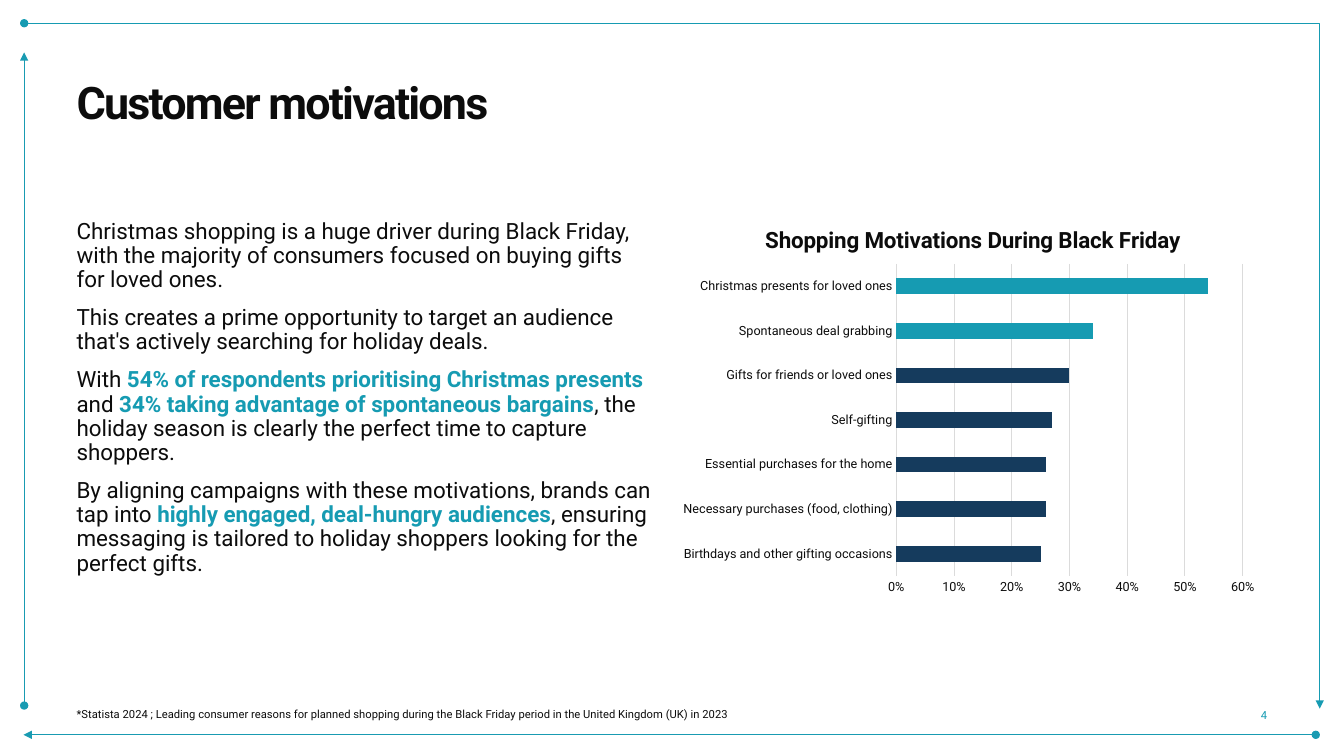
from dataclasses import dataclass

from lxml.etree import SubElement
from pptx import Presentation
from pptx.chart.data import CategoryChartData
from pptx.dml.color import RGBColor as RGB
from pptx.enum.chart import XL_CHART_TYPE as CT, XL_TICK_MARK as TICK
from pptx.enum.shapes import MSO_CONNECTOR as CONN
from pptx.enum.text import MSO_ANCHOR as ANCHOR, MSO_AUTO_SIZE as FIT, PP_ALIGN as ALIGN
from pptx.oxml import parse_xml
from pptx.oxml.ns import nsdecls, qn
from pptx.util import Inches, Pt


@dataclass(frozen=True)
class Theme:
    font: str = "Roboto"
    ink: str = "0C0C0C"
    teal: str = "169BB2"
    edge: str = "199BB2"
    navy: str = "153B5D"
    grid: str = "DBDBDB"
    title: int = 32
    body: int = 16
    chart: int = 10
    axis: int = 9
    small: int = 8
    line: float = 0.75


class Deck:
    MARGIN, COL, ROW = 0.76, 0.984, 0.1

    def __init__(self, prs, theme):
        self.prs, self.theme = prs, theme
        self.slide = prs.slides.add_slide(prs.slide_layouts[5])

    def cell(self, col, row, cols, rows):
        return (Inches(self.MARGIN + col * self.COL), Inches(row * self.ROW),
                Inches(cols * self.COL), Inches(rows * self.ROW))

    def font(self, font, size, color=None, bold=False):
        font.name, font.size, font.bold = self.theme.font, Pt(size), bold
        font.color.rgb = RGB.from_string(color or self.theme.ink)

    def stroke(self, line, color):
        line.color.rgb = RGB.from_string(color)
        line.width = Pt(self.theme.line)

    def frame_line(self, kind, start, end, color, head, tail):
        w, h = self.prs.slide_width, self.prs.slide_height
        (x1, y1), (x2, y2) = start, end
        sp = self.slide.shapes.add_connector(
            kind, int(w * x1 / 100), int(h * y1 / 100), int(w * x2 / 100), int(h * y2 / 100))
        self.stroke(sp.line, color)
        ln = sp.line._get_or_add_ln()
        SubElement(ln, qn("a:headEnd"), type=head)
        SubElement(ln, qn("a:tailEnd"), type=tail)
        SubElement(sp._element.spPr, qn("a:effectLst"))
        return sp

    def corner_line(self, *args):
        sp = self.frame_line(CONN.ELBOW, *args)
        guides = sp._element.spPr.find(qn("a:prstGeom")).get_or_add_avLst()
        SubElement(guides, qn("a:gd"), name="adj1", fmla="val 100000")

    def fill_text(self, sp, paragraphs, size, color=None, bold=False, align=ALIGN.LEFT,
                  anchor=ANCHOR.TOP, right=0, spacing=0.9):
        tf = sp.text_frame
        tf.word_wrap, tf.auto_size, tf.vertical_anchor = True, FIT.NONE, anchor
        tf.margin_left = tf.margin_top = tf.margin_bottom = 0
        tf.margin_right = Inches(right)
        for i, runs in enumerate(paragraphs):
            p = tf.add_paragraph() if i else tf.paragraphs[0]
            p.alignment, p.line_spacing = align, spacing
            p.space_before = Pt(10 if i else 0)
            for text, strong in runs:
                r = p.add_run()
                r.text = text
                self.font(r.font, size, self.theme.teal if strong else color, bold or strong)

    def title(self, text, box):
        sp = self.slide.shapes.title
        sp.left, sp.top, sp.width, sp.height = box
        self.fill_text(sp, [[(text, False)]], self.theme.title, bold=True)
        sp.text_frame.paragraphs[0].runs[0].font._element.set("spc", "-130")

    def text(self, paragraphs, box, size, **style):
        self.fill_text(self.slide.shapes.add_textbox(*box), paragraphs, size, **style)

    def place(self, element, index, **shares):
        old = element.find(qn("c:layout"))
        if old is not None:
            index = element.index(old)
            element.remove(old)
        tags = "".join(f'<c:{k} val="{v}"/>' for k, v in shares.items())
        element.insert(index, parse_xml(
            f'<c:layout {nsdecls("c")}><c:manualLayout>{tags}</c:manualLayout></c:layout>'))

    def bar_chart(self, title, values, highlights, box):
        t = self.theme
        data = CategoryChartData(number_format="0%")
        data.categories = list(values)
        data.add_series("Series 1", list(values.values()))
        chart = self.slide.shapes.add_chart(CT.BAR_CLUSTERED, *box, data).chart
        self.font(chart.font, t.chart)
        chart.has_legend = False
        chart.has_title = True
        r = chart.chart_title.text_frame.paragraphs[0].add_run()
        r.text = title
        self.font(r.font, t.body, bold=True)
        self.place(chart.chart_title._element, 1, xMode="edge", yMode="edge", x=0.15, y=0.045)

        cat, val = chart.category_axis, chart.value_axis
        for axis in (cat, val):
            axis.major_tick_mark = axis.minor_tick_mark = TICK.NONE
            self.font(axis.tick_labels.font, t.axis)
        cat.has_major_gridlines = False
        self.stroke(cat.format.line, t.grid)
        val.minimum_scale, val.maximum_scale, val.major_unit = 0, 0.6, 0.1
        val.tick_labels.number_format = "0%"
        val.tick_labels.number_format_is_linked = False
        val.format.line.fill.background()
        val.has_major_gridlines = True
        self.stroke(val.major_gridlines.format.line, t.grid)

        plot = chart.plots[0]
        plot.gap_width, plot.vary_by_categories = 182, False
        bars = plot.series[0]
        fills = [(bars, t.navy)] + [(bars.points[i], t.teal) for i in highlights]
        for bar, color in fills:
            bar.format.fill.solid()
            bar.format.fill.fore_color.rgb = RGB.from_string(color)
        self.place(chart._chartSpace.chart.plotArea, 0, layoutTarget="inner", xMode="edge",
                   yMode="edge", x=0.377, y=0.152, w=0.582, h=0.786)


STORY = [
    [("Christmas shopping is a huge driver during Black Friday, with the majority of "
      "consumers focused on buying gifts for loved ones.", False)],
    [("This creates a prime opportunity to target an audience that's actively searching "
      "for holiday deals.", False)],
    [("With ", False),
     ("54% of respondents prioritising Christmas presents ", True),
     ("and ", False),
     ("34% taking advantage of spontaneous bargains", True),
     (", the holiday season is clearly the perfect time to capture shoppers.", False)],
    [("By aligning campaigns with these motivations, brands can tap into ", False),
     ("highly engaged, deal-hungry audiences", True),
     (", ensuring messaging is tailored to holiday shoppers looking for the perfect gifts.",
      False)],
]
SOURCE = ("*Statista 2024 ; Leading consumer reasons for planned shopping during the "
          "Black Friday period in the United Kingdom (UK) in 2023")
MOTIVATIONS = {
    "Birthdays and other gifting occasions": 0.25,
    "Necessary purchases (food, clothing)": 0.26,
    "Essential purchases for the home": 0.26,
    "Self-gifting": 0.27,
    "Gifts for friends or loved ones": 0.3,
    "Spontaneous deal grabbing": 0.34,
    "Christmas presents for loved ones": 0.54,
}


def main():
    prs = Presentation()
    prs.slide_width, prs.slide_height = Inches(13.33), Inches(7.5)
    theme = Theme()
    deck = Deck(prs, theme)
    deck.frame_line(CONN.STRAIGHT, (1.75, 97.2), (97.9, 97.2), theme.edge, "triangle", "oval")
    deck.frame_line(CONN.STRAIGHT, (1.8, 6.93), (1.8, 93.33), theme.edge, "triangle", "oval")
    deck.corner_line((1.8, 3.07), (98.2, 93.73), theme.teal, "oval", "triangle")
    deck.title("Customer motivations", deck.cell(0, 8, 12, 9.8))
    deck.text(STORY, deck.cell(0, 21.8, 6, 47.2), theme.body, right=0.2)
    deck.text([[("4", False)]], deck.cell(11.2, 69, 0.8, 3.9), theme.small, color=theme.teal,
              align=ALIGN.RIGHT, anchor=ANCHOR.MIDDLE, spacing=1.0)
    deck.text([[(SOURCE, False)]], deck.cell(0, 69, 11.2, 3.9), theme.small,
              anchor=ANCHOR.MIDDLE)
    deck.bar_chart("Shopping Motivations During Black Friday", MOTIVATIONS, (5, 6),
                   deck.cell(6, 20.2, 6, 39.4))
    prs.save("out.pptx")


if __name__ == "__main__":
    main()
